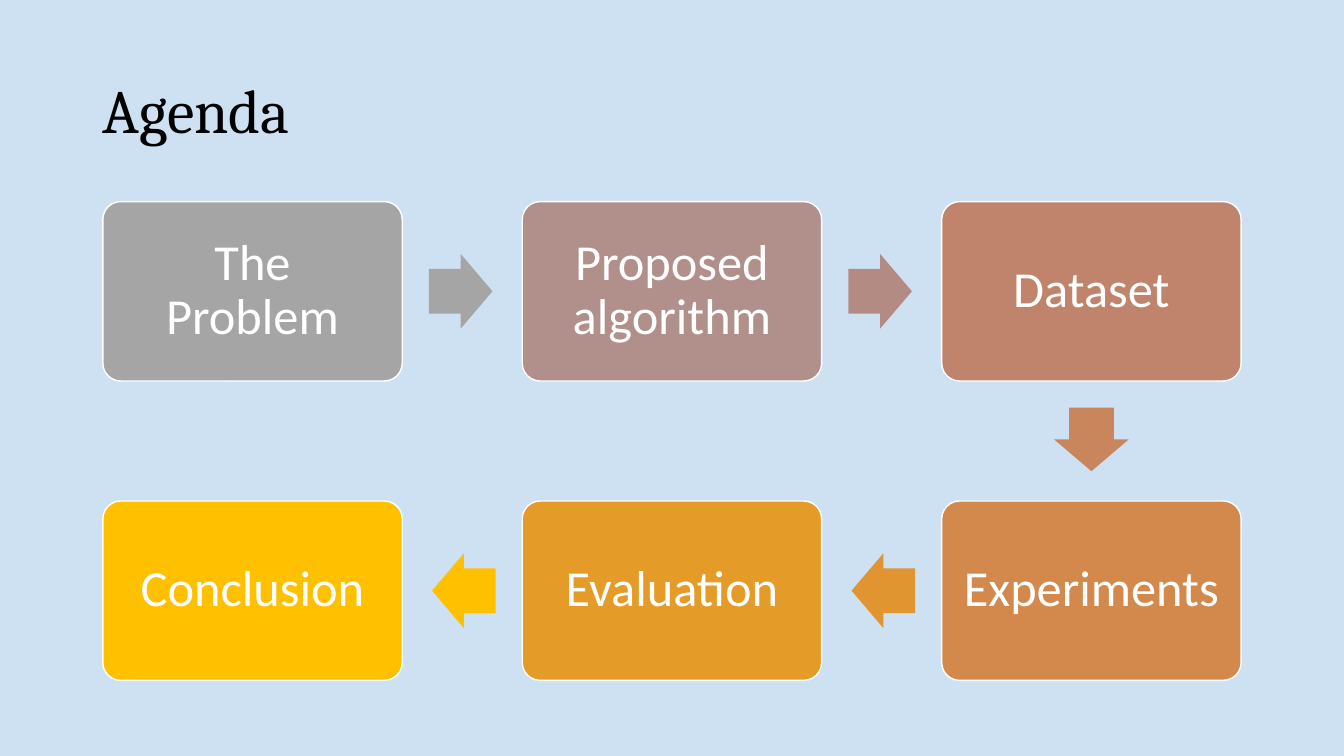
from dataclasses import dataclass

from pptx import Presentation
from pptx import util as u
from pptx.dml.color import RGBColor
from pptx.enum import shapes, text

BOX_WIDTH, BOX_HEIGHT = 2.97, 1.78
LEFT, TOP = 1.02, 2.0
COLUMN_STEP, ROW_STEP = 4.16, 2.97
ARROW_WIDTH, ARROW_HEIGHT = 0.63, 0.74
ARROW_REACH = 0.58  # from the edge of a box to the middle of its arrow
DIRECTIONS = {0: (1, 0), 90: (0, 1), 180: (-1, 0)}


@dataclass(frozen=True)
class Step:
    label: str
    column: int
    row: int
    fill: str
    arrow_angle: int | None = None
    arrow_fill: str = ""


STEPS = [
    Step("The Problem", 0, 0, "A5A5A5", 0, "A5A5A5"),
    Step("Proposed algorithm", 1, 0, "B18F8A", 0, "B48B83"),
    Step("Dataset", 2, 0, "C0846C", 90, "C9865C"),
    Step("Experiments", 2, 1, "D2894B", 180, "E19530"),
    Step("Evaluation", 1, 1, "E59B27", 180, "FFC000"),
    Step("Conclusion", 0, 1, "FFC000"),
]


def colour(code: str) -> RGBColor:
    return RGBColor.from_string(code)


def write(frame, words: str, *, size: float, font: str, ink: str, align) -> None:
    frame.word_wrap = True
    frame.vertical_anchor = text.MSO_ANCHOR.MIDDLE
    para = frame.paragraphs[0]
    para.alignment = align
    para.line_spacing = 0.9
    span = para.add_run()
    span.text = words
    span.font.size = u.Pt(size)
    span.font.name = font
    span.font.color.rgb = colour(ink)


def add_filled(page, kind, left: float, top: float, width: float, height: float,
               fill: str, adjustments: list[float]):
    shape = page.shapes.add_shape(
        kind, u.Inches(left), u.Inches(top), u.Inches(width), u.Inches(height))
    shape.shadow.inherit = False
    shape.fill.solid()
    shape.fill.fore_color.rgb = colour(fill)
    shape.line.fill.background()
    for index, value in enumerate(adjustments):
        shape.adjustments[index] = value
    return shape


def add_step(page, step: Step) -> None:
    left = LEFT + step.column * COLUMN_STEP
    top = TOP + step.row * ROW_STEP
    box = add_filled(page, shapes.MSO_SHAPE.ROUNDED_RECTANGLE, left, top,
                     BOX_WIDTH, BOX_HEIGHT, step.fill, [0.1])
    box.line.color.rgb = colour("FFFFFF")
    box.line.width = u.Pt(1)
    frame = box.text_frame
    frame.margin_left = frame.margin_right = u.Inches(0.15)
    frame.margin_top = frame.margin_bottom = u.Inches(0.15)
    write(frame, step.label, size=36, font="Calibri", ink="FFFFFF",
          align=text.PP_ALIGN.CENTER)

    # Arrow leaving the box towards the next step
    if step.arrow_angle is None:
        return
    across, down = DIRECTIONS[step.arrow_angle]
    middle_x = left + BOX_WIDTH / 2 + across * (BOX_WIDTH / 2 + ARROW_REACH)
    middle_y = top + BOX_HEIGHT / 2 + down * (BOX_HEIGHT / 2 + ARROW_REACH)
    arrow = add_filled(page, shapes.MSO_SHAPE.RIGHT_ARROW,
                       middle_x - ARROW_WIDTH / 2, middle_y - ARROW_HEIGHT / 2,
                       ARROW_WIDTH, ARROW_HEIGHT, step.arrow_fill, [0.6, 0.5])
    arrow.rotation = step.arrow_angle


def main() -> None:
    deck = Presentation()
    deck.slide_width, deck.slide_height = u.Inches(13.33), u.Inches(7.5)
    page = deck.slides.add_slide(deck.slide_layouts.get_by_name("Title Only"))

    # Background
    page.background.fill.solid()
    page.background.fill.fore_color.rgb = colour("CEE1F2")

    # Title
    title = page.shapes.title
    title.left, title.top = u.Inches(0.92), u.Inches(0.4)
    title.width, title.height = u.Inches(11.5), u.Inches(1.45)
    write(title.text_frame, "Agenda", size=44, font="Cambria", ink="000000",
          align=text.PP_ALIGN.LEFT)

    # Agenda steps
    for step in STEPS:
        add_step(page, step)

    deck.save("out.pptx")


if __name__ == "__main__":
    main()
